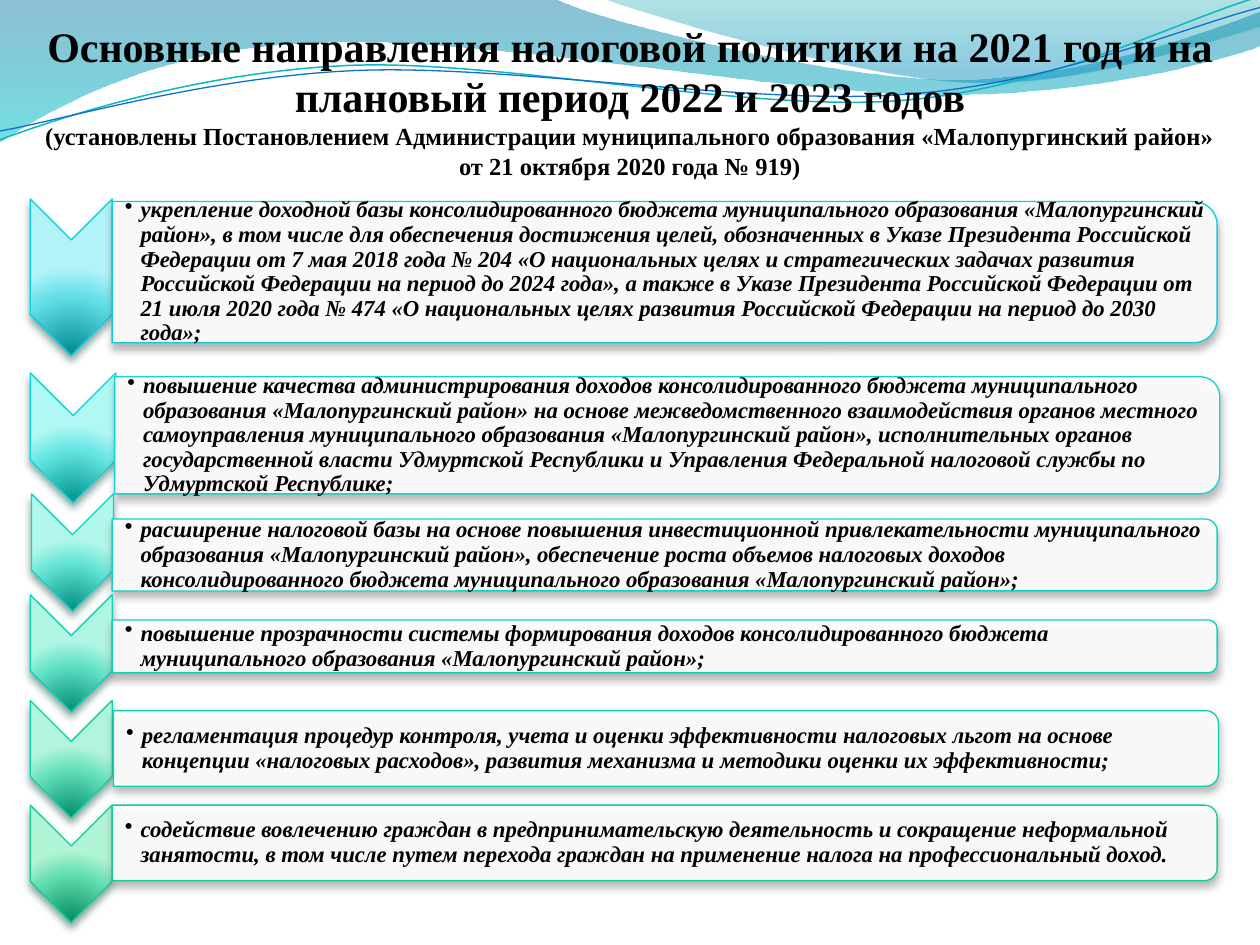
import pptx
import pptx.util
import pptx.oxml
import pptx.oxml.ns
import pptx.dml.color
import pptx.enum.shapes
import pptx.enum.text

PX = 9144  # one px is a hundredth of an inch
FACE = "Times New Roman"
SPACE = pptx.oxml.ns.nsdecls("a")

# Content
HEAD = [
    ("Основные направления налоговой политики на 2021 год и на плановый период 2022 и 2023 годов", 24),
    ("(установлены Постановлением Администрации муниципального образования "
     "«Малопургинский район» от 21 октября 2020 года № 919)", 14),
]
GOALS = [
    "укрепление доходной базы консолидированного бюджета муниципального образования «Малопургинский район», "
    "в том числе для обеспечения достижения целей, обозначенных в Указе Президента Российской Федерации "
    "от 7 мая 2018 года № 204 «О национальных целях и стратегических задачах развития Российской Федерации "
    "на период до 2024 года», а также в Указе Президента Российской Федерации от 21 июля 2020 года № 474 "
    "«О национальных целях развития Российской Федерации на период до 2030 года»;",
    "повышение качества администрирования доходов консолидированного бюджета муниципального образования "
    "«Малопургинский район» на основе межведомственного взаимодействия органов местного самоуправления "
    "муниципального образования «Малопургинский район», исполнительных органов государственной власти "
    "Удмуртской Республики и Управления Федеральной налоговой службы по Удмуртской Республике;",
    "расширение налоговой базы на основе повышения инвестиционной привлекательности муниципального "
    "образования «Малопургинский район», обеспечение роста объемов налоговых доходов консолидированного "
    "бюджета муниципального образования «Малопургинский район»;",
    "повышение прозрачности системы формирования доходов консолидированного бюджета муниципального "
    "образования «Малопургинский район»;",
    "регламентация процедур контроля, учета и оценки эффективности налоговых льгот на основе концепции "
    "«налоговых расходов», развития механизма и методики оценки их эффективности;",
    "содействие вовлечению граждан в предпринимательскую деятельность и сокращение неформальной занятости, "
    "в том числе путем перехода граждан на применение налога на профессиональный доход.",
]
# Arrow and panel of each goal: left, top, width, height
SPOTS = [
    ((24, 158, 65, 124), (89, 160, 877, 112)),
    ((24, 296, 68, 103), (91, 299, 877, 93)),
    ((25, 392, 65, 93), (89, 412, 877, 57)),
    ((24, 472, 65, 93), (89, 492, 877, 42)),
    ((24, 556, 65, 93), (90, 564, 877, 60)),
    ((24, 639, 65, 93), (89, 639, 877, 60)),
]
# Colours of each goal: dark, middle, light, line, shadow
TINTS = [
    ("008A91", "64DFE7", "B1F3F9", "0BD0D9", "024B4E"),
    ("00908D", "64E6E2", "B1F8F5", "0CD7D3", "024D4C"),
    ("008F81", "64E4D4", "B1F7EC", "0DD5C4", "034D46"),
    ("008E76", "65E2C7", "B1F6E4", "0ED3B6", "034C41"),
    ("008D6B", "65E0BB", "B2F5DC", "0FD1A8", "044B3C"),
    ("008C60", "65DEB0", "B2F4D6", "10CF9B", "044A37"),
]
# Waves: a pair is a straight step, six numbers are a curve
BANDS = [
    ([(0, 0), (440, -1), (476, 17, 664, 63, 758, 63), (853, 63, 958, 26, 1000, 9), (1001, 36),
      (983, 44, 870, 76, 746, 75), (622, 75, 382, 28, 257, 34), (129, 36, 46, 83, -1, 113)],
     [(0, "0074A1", 45), (100, "00C6CF", 55)]),
    ([(479, -1), (509, 11, 682, 62, 769, 65), (856, 69, 961, 32, 1000, 21), (1000, 0)],
     [(0, "00A1A9", 30), (80, "008BBF", 45)]),
]
CURVES = [
    ([(0, 111), (48, 93, 158, 57, 277, 52), (395, 47, 593, 89, 713, 80), (833, 71, 938, 15, 998, -2)],
     "0AB8BF", 0.85),
    ([(0, 104), (47, 96, 164, 61, 283, 56), (403, 51, 597, 84, 717, 75), (836, 67, 941, 21, 1000, 6)],
     "0F6FC6", 0.75),
]

FRAME = {"word_wrap": True, "margin_left": pptx.util.Pt(7.28), "margin_top": PX, "margin_right": PX,
         "margin_bottom": PX, "vertical_anchor": pptx.enum.text.MSO_ANCHOR.MIDDLE}
CROWN = {**FRAME, "margin_left": 0, "margin_top": 5 * PX, "margin_right": 0, "margin_bottom": 24 * PX,
         "vertical_anchor": pptx.enum.text.MSO_ANCHOR.BOTTOM}
FONT = {"name": FACE, "bold": True}
HANG = pptx.util.Pt(9)

deck = pptx.Presentation()
deck.slide_width, deck.slide_height = 1000 * PX, 750 * PX
slide = deck.slides.add_slide(deck.slide_layouts[6])
items = slide.shapes


def hue(code):
    return pptx.dml.color.RGBColor.from_string(code)


def dress(thing, vals):
    for key, val in vals.items():
        setattr(thing, key, val)


def node(tag, body=""):
    """Make a drawing element from its tag, with attributes, and its content."""
    name = tag.split()[0]
    return pptx.oxml.parse_xml(f"<a:{tag} {SPACE}>{body}</a:{name}>")


def tone(code, alpha):
    return f'<a:srgbClr val="{code}"><a:alpha val="{alpha * 1000}"/></a:srgbClr>'


def fill(shape, paint):
    shape.fill.background()
    old = shape._element.spPr.find(pptx.oxml.ns.qn("a:noFill"))
    old.getparent().replace(old, paint)


def blend(shape, stops, way):
    marks = "".join(f'<a:gs pos="{at * 1000}">{tone(code, alpha)}</a:gs>' for at, code, alpha in stops)
    fill(shape, node('gradFill rotWithShape="1"', f"<a:gsLst>{marks}</a:gsLst>{way}"))


def edge(shape, code, width):
    shape.line.color.rgb = hue(code)
    shape.line.width = pptx.util.Pt(width)


def trace(steps, close):
    """Draw an outline, joining three points into each curve."""
    dots = [(step[n] * PX, step[n + 1] * PX) for step in steps for n in range(0, len(step), 2)]
    pen = items.build_freeform(*dots[0], scale=1.0)
    pen.add_line_segments(dots[1:], close=close)
    shape = pen.convert_to_shape()
    shape.shadow.inherit = False
    legs = iter(list(shape._element.iter(pptx.oxml.ns.qn("a:lnTo"))))
    for step in steps[1:]:
        group = [next(legs) for n in range(len(step) // 2)]
        if len(group) == 3:
            bend = node("cubicBezTo")
            group[0].addprevious(bend)
            for leg in group:
                bend.append(leg[0])
                leg.getparent().remove(leg)
    return shape


def turned(kind, spot, line, shade):
    """Add a shape turned a quarter so that it covers the spot."""
    left, top, wide, high = spot
    shift = (wide - high) / 2
    place = (left + shift, top - shift, high, wide)
    shape = items.add_shape(kind, *(round(v * PX) for v in place))
    shape.rotation = 90
    edge(shape, line, 0.75)
    shape.shadow.inherit = False
    glow = node('outerShdw blurRad="57150" dist="38100" dir="5400000" rotWithShape="0"', tone(shade, 48))
    shape._element.spPr.find(pptx.oxml.ns.qn("a:effectLst")).append(glow)
    return shape


def write(para, text, size, **more):
    run = para.add_run()
    run.text = text
    dress(run.font, {**FONT, "size": pptx.util.Pt(size), **more})
    run.font.color.rgb = hue("000000")


def label(spot, form):
    frame = items.add_textbox(*(round(v * PX) for v in spot)).text_frame
    dress(frame, form)
    return frame.paragraphs[0]


def bullet(para):
    props = para._p.get_or_add_pPr()
    props.set("marL", str(HANG))
    props.set("indent", str(-HANG))
    props.append(node('buChar char="•"'))
    para._p.append(node('endParaRPr lang="ru-RU" sz="1300" b="1" i="1"', f'<a:latin typeface="{FACE}"/>'))


# Waves at the top
for steps, stops in BANDS:
    band = trace(steps, True)
    blend(band, stops, '<a:lin ang="5400000" scaled="0"/>')
    band.line.fill.background()
for steps, code, width in CURVES:
    curve = trace(steps, False)
    curve.fill.background()
    edge(curve, code, width)

# Title
para = label((25, 25, 950, 142), CROWN)
para.alignment = pptx.enum.text.PP_ALIGN.CENTER
for n, (text, size) in enumerate(HEAD):
    if n:
        para.add_line_break()
    write(para, text, size)

# Goals: arrow, panel and text
KINDS = pptx.enum.shapes.MSO_SHAPE
ROUND = '<a:path path="circle"><a:fillToRect l="50000" t="130000" r="50000" b="-30000"/></a:path>'
for goal, (spot, panel), (dark, mid, light, line, shade) in zip(GOALS, SPOTS, TINTS):
    arrow = turned(KINDS.CHEVRON, spot, line, shade)
    blend(arrow, [(0, dark, 100), (68, mid, 100), (100, light, 100)], ROUND)
    board = turned(KINDS.ROUND_2_SAME_RECTANGLE, panel, line, "5A5A5A")
    fill(board, node("solidFill", tone("FFFFFF", 90)))
    left, top, wide, high = panel
    para = label((left, top + high * 0.05, wide - 4, high * 0.9), FRAME)
    para.line_spacing = 0.9
    write(para, goal, 13, italic=True)
    bullet(para)

deck.save("out.pptx")
